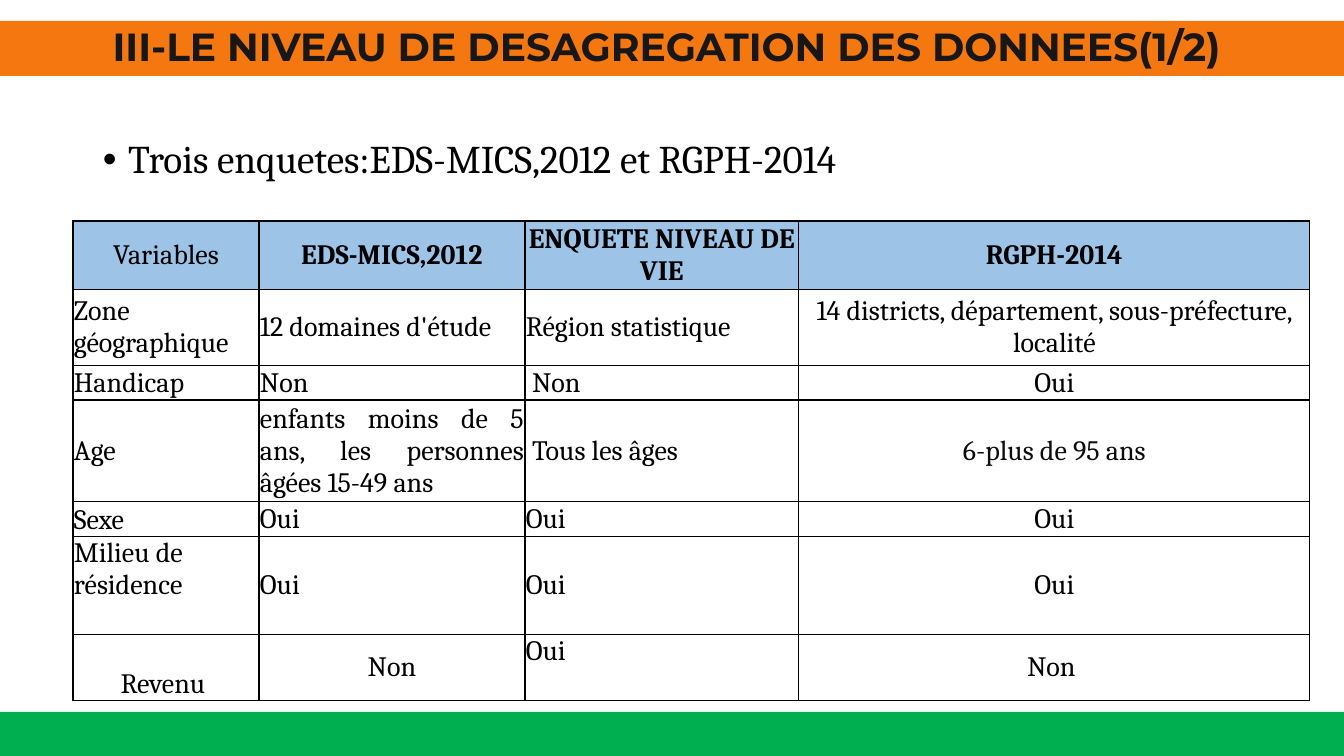
from pptx import Presentation
from pptx.dml.color import RGBColor
from pptx.enum.shapes import MSO_SHAPE as Shape
from pptx.enum.text import MSO_ANCHOR as Anchor, PP_ALIGN as Align
from pptx.oxml import parse_xml
from pptx.oxml.ns import nsdecls
from pptx.util import Emu, Pt

COLORS = {
    "orange": "F5770F", "green": "00B050", "header": "9DC3E6",
    "black": "000000", "title": "181717", "soft": "0D0D0D",
}
WIDTH, HEIGHT = 1344, 756
SCALE = 12192000 / WIDTH


def px(length):
    return Emu(round(length * SCALE))


def rgb(name):
    return RGBColor.from_string(COLORS[name])


class PageBuilder:
    """Holds the text style and the current slide."""

    def __init__(self, page, font="Cambria", size=20):
        self.page, self.font, self.size = page, font, size

    def add_text(self, frame, text, align, color="black", bold=False, size=None, font=None):
        para = frame.paragraphs[0]
        para.alignment = align
        span = para.add_run()
        span.text = text
        span.font.name = font or self.font
        span.font.size = Pt(size or self.size)
        span.font.bold = bold
        span.font.color.rgb = rgb(color)
        return para

    def band(self, top, height, color):
        box = self.page.shapes.add_shape(Shape.RECTANGLE, 0, px(top), px(WIDTH), px(height))
        box.shadow.inherit = False
        box.fill.solid()
        box.fill.fore_color.rgb = rgb(color)
        box.line.fill.background()
        return box

    def bullet(self, left, top, width, height, text, size):
        box = self.page.shapes.add_textbox(px(left), px(top), px(width), px(height))
        box.text_frame.word_wrap = True
        para = self.add_text(box.text_frame, text, Align.LEFT, size=size)
        para.line_spacing = 0.9
        para.space_before = Pt(10)
        props = para._p.get_or_add_pPr()
        props.set("marL", "228600")
        props.set("indent", "-228600")
        props.append(parse_xml(f'<a:buFont {nsdecls("a")} typeface="Arial"/>'))
        props.append(parse_xml(f'<a:buChar {nsdecls("a")} char="•"/>'))

    def table(self, left, top, widths, heights):
        frame = self.page.shapes.add_table(
            len(heights), len(widths), px(left), px(top), px(sum(widths)), px(sum(heights)))
        grid = frame.table
        grid.first_row = grid.horz_banding = False
        for column, width in zip(grid.columns, widths):
            column.width = px(width)
        for row, height in zip(grid.rows, heights):
            row.height = px(height)
        return grid

    def cell(self, cell, text, align, anchor, fill=None, **style):
        cell.margin_left = cell.margin_right = cell.margin_top = px(1)
        cell.margin_bottom = 0
        cell.vertical_anchor = anchor
        self.add_text(cell.text_frame, text, align, **style)
        props = cell._tc.get_or_add_tcPr()
        for side in ("lnL", "lnR", "lnT", "lnB"):
            props.append(parse_xml(
                f'<a:{side} {nsdecls("a")} w="12700"><a:solidFill>'
                f'<a:srgbClr val="{COLORS["black"]}"/></a:solidFill></a:{side}>'))
        if fill:
            cell.fill.solid()
            cell.fill.fore_color.rgb = rgb(fill)
        else:
            cell.fill.background()


ROWS = [
    ["Variables", "EDS-MICS,2012", "ENQUETE NIVEAU DE VIE", "RGPH-2014"],
    ["Zone géographique", "12 domaines d'étude", "Région statistique",
     "14 districts, département, sous-préfecture, localité"],
    ["Handicap", "Non ", " Non", "Oui"],
    ["Age", "enfants moins de 5 ans, les personnes âgées 15-49 ans",
     " Tous les âges", "6-plus de 95 ans"],
    ["Sexe", "Oui", "Oui", "Oui"],
    ["Milieu de résidence", "Oui", "Oui", "Oui"],
    ["Revenu ", "Non", "Oui", "Non "],
]
COLUMN_ALIGN = [Align.LEFT, Align.JUSTIFY, Align.LEFT, Align.CENTER]
CENTERED = {(6, 0), (6, 1)}
ANCHORS = {(2, 0): Anchor.BOTTOM, (4, 0): Anchor.BOTTOM, (5, 0): Anchor.TOP,
           (6, 0): Anchor.BOTTOM, (6, 2): Anchor.TOP}


def main():
    deck = Presentation()
    deck.slide_width, deck.slide_height = px(WIDTH), px(HEIGHT)
    builder = PageBuilder(deck.slides.add_slide(deck.slide_layouts[6]))

    # Introductory bullet
    builder.bullet(93, 135, 1159, 60, "Trois enquetes:EDS-MICS,2012 et RGPH-2014", 28)

    # Comparison of the surveys
    grid = builder.table(73, 221, [186, 266, 274, 511], [66, 76, 34, 98, 34, 98, 66])
    for r, row in enumerate(ROWS):
        for c, text in enumerate(row):
            header = r == 0
            centered = header or (r, c) in CENTERED
            builder.cell(
                grid.cell(r, c), text,
                Align.CENTER if centered else COLUMN_ALIGN[c],
                ANCHORS.get((r, c), Anchor.MIDDLE),
                fill="header" if header else None,
                bold=header and c > 0,
                color="soft" if (r, c) == (3, 3) else "black")

    # Title band and footer band
    title = builder.band(21, 55, "orange").text_frame
    title.word_wrap = True
    title.vertical_anchor = Anchor.MIDDLE
    para = builder.add_text(title, "III-LE NIVEAU DE DESAGREGATION DES DONNEES(1/2) ",
                            Align.CENTER, color="title", bold=True, size=28, font="Montserrat")
    para.line_spacing = 0.9
    builder.band(712, 44, "green")

    deck.save("out.pptx")


if __name__ == "__main__":
    main()
